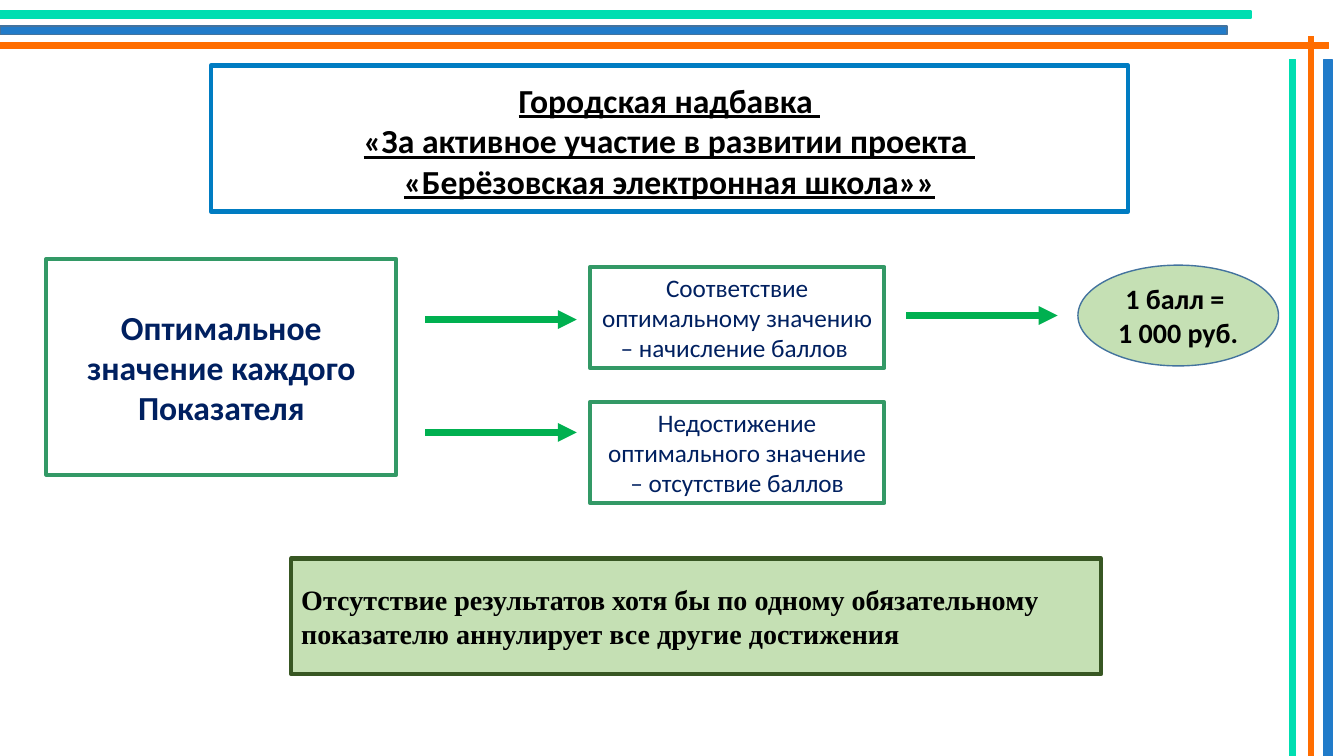
import pptx
import pptx.util
import pptx.dml.color
import pptx.enum.shapes
import pptx.enum.text
import pptx.oxml
import pptx.oxml.ns

Pt = pptx.util.Pt
KIND = pptx.enum.shapes.MSO_SHAPE
ALIGN = pptx.enum.text.PP_ALIGN
BLUE, MINT, ORANGE = "217BC9", "00DEB1", "FF6D00"
NAVY, GREEN, PALE = "002060", "339966", "C5E0B4"


def paint(color, code):
    color.rgb = pptx.dml.color.RGBColor.from_string(code)


def part(box, left, top, wide, high):
    x, y, w, h = box
    return (int(x + w * left / 100), int(y + h * top / 100),
            int(w * wide / 100), int(h * high / 100))


def block(slide, box, fill, edge, width, kind=KIND.RECTANGLE):
    shape = slide.shapes.add_shape(kind, *box)
    shape.shadow.inherit = False
    if fill:
        shape.fill.solid()
        paint(shape.fill.fore_color, fill)
    else:
        shape.fill.background()
    paint(shape.line.color, edge)
    shape.line.width = Pt(width)
    return shape


def write(shape, text, size, color, bold=False, line=False,
          font="Calibri", align=ALIGN.CENTER):
    frame = shape.text_frame
    frame.word_wrap = True
    frame.vertical_anchor = pptx.enum.text.MSO_ANCHOR.MIDDLE
    frame.text = text
    for para in frame.paragraphs:
        para.alignment = align
        for run in para.runs:
            run.font.name = font
            run.font.size = Pt(size)
            run.font.bold = bold
            run.font.underline = line
            paint(run.font.color, color)


def arrow(slide, box):
    x, y, w, h = box
    link = slide.shapes.add_connector(
        pptx.enum.shapes.MSO_CONNECTOR.STRAIGHT, x, y, x + w, y + h)
    paint(link.line.color, "00B050")
    link.line.width = Pt(4.5)
    tail = pptx.oxml.parse_xml(
        "<a:tailEnd %s type='triangle'/>" % pptx.oxml.ns.nsdecls("a"))
    link.line._get_or_add_ln().append(tail)
    flat = pptx.oxml.parse_xml("<a:effectLst %s/>" % pptx.oxml.ns.nsdecls("a"))
    link._element.spPr.append(flat)


def rails(slide, box):
    bars = [
        ((0, 3.47, 91.3, 1.07), BLUE, "43739E"),
        ((0, 1.47, 93.1, 0.93), MINT, MINT),
        ((0, 5.6, 98.87, 0.8), ORANGE, ORANGE),
        ((98.5, 7.87, 0.6, 92.13), BLUE, BLUE),
        ((95.95, 7.87, 0.45, 92.13), MINT, MINT),
        ((97.37, 4.8, 0.38, 95.2), ORANGE, ORANGE),
    ]
    for place, fill, edge in bars:
        block(slide, part(box, *place), fill, edge, 1)


def title(slide, box):
    shape = block(slide, box, None, "007CC2", 3)
    write(shape, "Городская надбавка \n"
          "«За активное участие в развитии проекта \n"
          "«Берёзовская электронная школа»»", 24, "000000", True, True)
    shape.text_frame.margin_top = Pt(6)


def flow(slide, box):
    goal = block(slide, part(box, 0, 0, 28.39, 88.44), "FFFFFF", GREEN, 3)
    write(goal, "Оптимальное значение каждого Показателя", 24, NAVY, True)

    cases = [
        (3.29, "Соответствие оптимальному значению – начисление баллов "),
        (58.68, "Недостижение оптимального значение – отсутствие баллов"),
    ]
    for top, text in cases:
        case = block(slide, part(box, 44.11, top, 23.9, 41.32),
                     "FFFFFF", GREEN, 3)
        write(case, text, 18, NAVY)

    for left, top in [(30.77, 24.8), (30.77, 71.08), (69.8, 23.12)]:
        arrow(slide, part(box, left, top, 12.27, 0))

    prize = block(slide, part(box, 83.72, 2.48, 16.28, 41.32),
                  PALE, "43739E", 1, KIND.OVAL)
    write(prize, "1 балл = \n1 000 руб.", 20, "000000", True)


def note(slide, box):
    shape = block(slide, box, PALE, "385723", 3)
    write(shape, "Отсутствие результатов хотя бы по одному обязательному "
          "показателю аннулирует все другие достижения", 20, "000000",
          True, font="Times New Roman", align=ALIGN.LEFT)


def main():
    deck = pptx.Presentation()
    deck.slide_width = pptx.util.Inches(13.33)
    deck.slide_height = pptx.util.Inches(7.5)
    slide = deck.slides.add_slide(deck.slide_layouts[6])
    page = (0, 0, deck.slide_width, deck.slide_height)
    rails(slide, page)
    title(slide, part(page, 15.68, 8.67, 68.27, 19.33))
    flow(slide, part(page, 3.45, 34.27, 91.68, 32.26))
    note(slide, part(page, 21.68, 73.87, 60.24, 15.33))
    deck.save("out.pptx")


if __name__ == "__main__":
    main()
